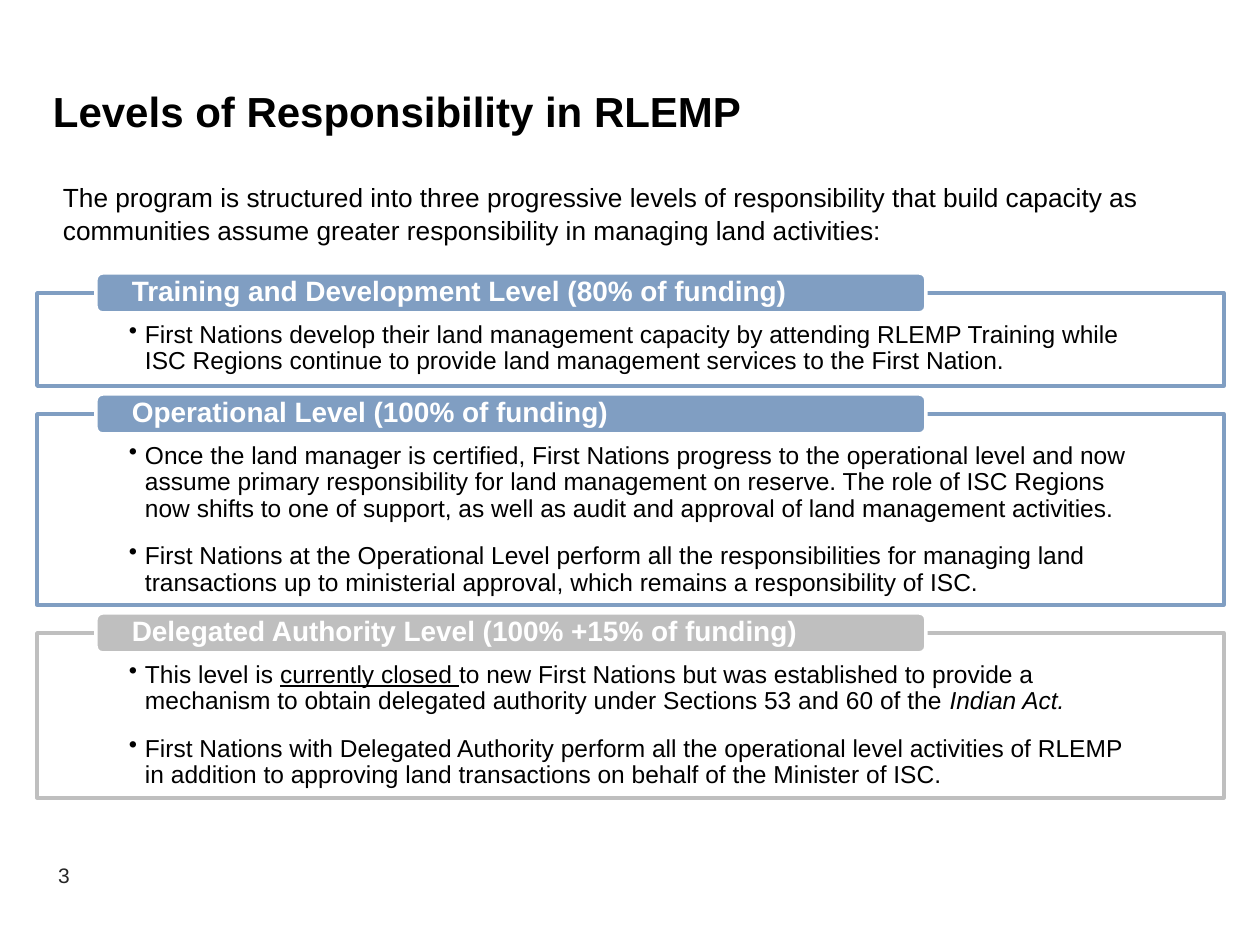
from lxml.etree import SubElement
from pptx import Presentation
from pptx.dml.color import RGBColor
from pptx.enum.shapes import MSO_SHAPE
from pptx.enum.text import MSO_ANCHOR, PP_ALIGN
from pptx.oxml.ns import qn
from pptx.util import Pt

SCALE = 914400 / 126  # EMU in one px
COLORS = {"blue": "809EC2", "gray": "BFBFBF", "white": "FFFFFF",
          "black": "000000", "number": "262626"}


def add_box(left, top, width, height, insets, shape=None, fill=None, line=None):
    """Add a text box, or a filled shape when a preset is given."""
    area = [round(value * SCALE) for value in (left, top, width, height)]
    if shape is None:
        box = page.shapes.add_textbox(*area)
    else:
        box = page.shapes.add_shape(shape, *area)
        box.shadow.inherit = False
        box.fill.solid()
        box.fill.fore_color.rgb = RGBColor.from_string(COLORS[fill])
        box.line.color.rgb = RGBColor.from_string(COLORS[line])
        box.line.width = Pt(2)
    frame = box.text_frame
    frame.word_wrap = True
    frame.vertical_anchor = MSO_ANCHOR.TOP
    frame.margin_left, frame.margin_top, frame.margin_right, frame.margin_bottom = [
        round(value * SCALE) for value in insets]
    return box


def add_span(paragraph, text, size, color="black", bold=False, style=""):
    span = paragraph.add_run()
    span.text = text
    span.font.name = "Arial"
    span.font.size = Pt(size)
    span.font.color.rgb = RGBColor.from_string(COLORS[color])
    span.font.bold = bold
    if style == "underline":
        span.font.underline = True
    if style == "italic":
        span.font.italic = True


deck = Presentation()
deck.slide_width = round(1260 * SCALE)
deck.slide_height = round(945 * SCALE)
page = deck.slides.add_slide(deck.slide_layouts[6])

# Page number
number = add_box(5, 859, 118, 38, (13, 6, 13, 6)).text_frame.paragraphs[0]
number.alignment = PP_ALIGN.CENTER
number.line_spacing = 0.9
add_span(number, "3", 12, "number")

# Title
title = add_box(53, 94, 1081, 42, (0, 0, 0, 0)).text_frame.paragraphs[0]
title.line_spacing = Pt(24)
add_span(title, "Levels of Responsibility in RLEMP", 24, bold=True)

# Introduction
intro = add_box(63, 179, 1134, 84, (0, 0, 0, 0)).text_frame.paragraphs[0]
intro.line_spacing = 1.06
add_span(intro, "The program is structured into three progressive levels of responsibility "
         "that build capacity as communities assume greater responsibility in managing "
         "land activities:", 15)

# Levels: heading, color, panel height, bullets as (text, style) spans
levels = [
    ("Training and Development Level (80% of funding)", "blue", 93, [
        [("First Nations develop their land management capacity by attending RLEMP "
          "Training while ISC Regions continue to provide land management services to "
          "the First Nation.", "")],
    ]),
    ("Operational Level (100% of funding)", "blue", 191, [
        [("Once the land manager is certified, First Nations progress to the operational "
          "level and now assume primary responsibility for land management on reserve. "
          "The role of ISC Regions now shifts to one of support, as well as audit and "
          "approval of land management activities.", "")],
        [("First Nations at the Operational Level perform all the responsibilities for "
          "managing land transactions up to ministerial approval, which remains a "
          "responsibility of ISC.", "")],
    ]),
    ("Delegated Authority Level (100% +15% of funding)", "gray", 165, [
        [("This level is ", ""), ("currently closed ", "underline"),
         ("to new First Nations but was established to provide a mechanism to obtain "
          "delegated authority under Sections 53 and 60 of the", ""),
         (" Indian Act.", "italic")],
        [("First Nations with Delegated Authority perform all the operational level "
          "activities of RLEMP in addition to approving land transactions on behalf of "
          "the Minister of ISC.", "")],
    ]),
]
GAP = 28
INDENT = round(16 * SCALE)
top = 293
for heading, color, height, bullets in levels:
    # Outlined panel with its bullets
    panel = add_box(37, top, 1187, height, (92, 29, 92, 14),
                    MSO_SHAPE.RECTANGLE, "white", color)
    fill_color = panel.fill._xPr.find(qn("a:solidFill"))[0]
    SubElement(fill_color, qn("a:alpha"), val="90000")
    for index, spans in enumerate(bullets):
        frame = panel.text_frame
        paragraph = frame.add_paragraph() if index else frame.paragraphs[0]
        paragraph.alignment = PP_ALIGN.LEFT
        paragraph.line_spacing = 0.9
        paragraph.space_after = Pt(12)
        properties = paragraph._p.get_or_add_pPr()
        properties.set("marL", str(INDENT))
        properties.set("indent", str(-INDENT))
        SubElement(properties, qn("a:buChar"), char="•")
        for text, style in spans:
            add_span(paragraph, text, 14, style=style)

    # Heading tab over the panel's upper edge
    tab = add_box(96, top - 20, 830, 40, (34, 0, 34, 0),
                  MSO_SHAPE.ROUNDED_RECTANGLE, color, "white")
    tab.text_frame.vertical_anchor = MSO_ANCHOR.MIDDLE
    paragraph = tab.text_frame.paragraphs[0]
    paragraph.alignment = PP_ALIGN.LEFT
    paragraph.line_spacing = 0.9
    add_span(paragraph, heading, 16, "white", bold=True)
    top += height + GAP

deck.save("out.pptx")
